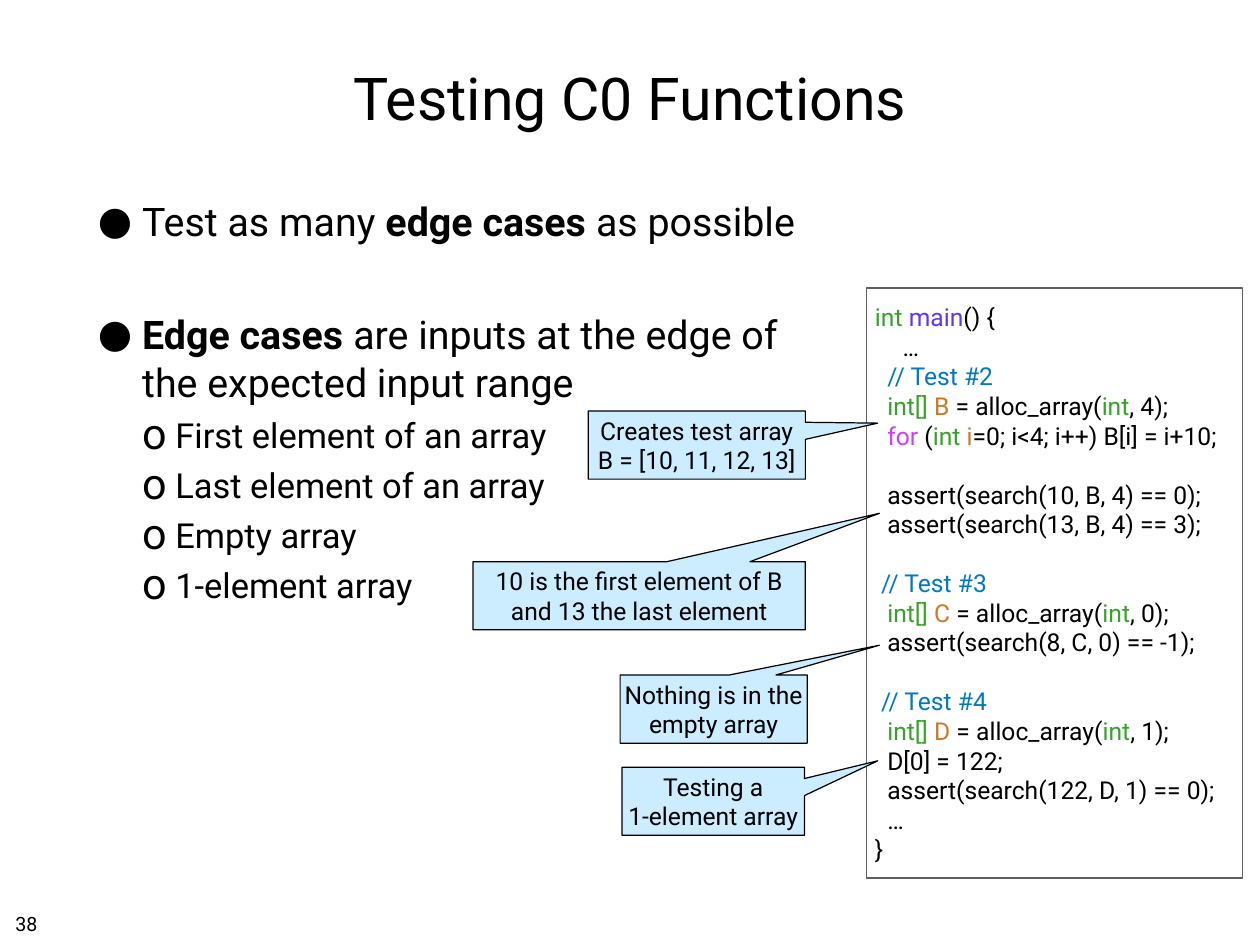
from dataclasses import dataclass
from lxml import etree
from pptx import Presentation
from pptx.dml.color import RGBColor
from pptx.enum.shapes import MSO_SHAPE
from pptx.enum.text import MSO_ANCHOR, MSO_AUTO_SIZE, PP_ALIGN
from pptx.oxml.ns import qn
from pptx.util import Pt

RECT = MSO_SHAPE.RECTANGLE
CALLOUT = MSO_SHAPE.RECTANGULAR_CALLOUT
TOP, MIDDLE = MSO_ANCHOR.TOP, MSO_ANCHOR.MIDDLE
LEFT, CENTER = PP_ALIGN.LEFT, PP_ALIGN.CENTER
FIXED = MSO_AUTO_SIZE.NONE


@dataclass(frozen=True)
class Theme:
    font: str = "Roboto"
    ink: str = "000000"
    type: str = "34A327"
    func: str = "5E34FF"
    note: str = "0079BF"
    name: str = "CD7923"
    key: str = "D03BFF"
    frame: str = "5E5E5E"
    tint: str = "CCECFF"
    title: int = 48
    body: int = 32
    sub: int = 28
    code: int = 20
    page: int = 16


THEME = Theme()
LINE = 24  # height of one line of code
STEP = 10  # one level of code indent

BULLETS = [
    [("Test as many ", False), ("edge cases ", True), ("as possible", False)],
    [("Edge cases ", True),
     ("are inputs at the edge of \vthe expected input range", False)],
]
CASES = ["First element of an array", "Last element of an array",
         "Empty array", "1-element array"]


def alloc(name, size):
    return [("int[] ", THEME.type), (name, THEME.name),
            (" = alloc_array(", THEME.ink), ("int", THEME.type),
            (f", {size});", THEME.ink)]


def plain(text):
    return [(text, THEME.ink)]


def note(text):
    return [(text, THEME.note)]


# Each line of code: indent, space before, coloured parts
CODE = [
    (0, 0, [("int ", THEME.type), ("main", THEME.func), ("() {", THEME.ink)]),
    (22.5, 0, plain("…")),
    (STEP, 0, note("// Test #2")),
    (STEP, 0, alloc("B", 4)),
    (STEP, 0, [("for ", THEME.key), ("(", THEME.ink), ("int ", THEME.type),
               ("i", THEME.name), ("=0; i<4; i++) B[i] = i+10;", THEME.ink)]),
    (STEP, LINE, plain("assert(search(10, B, 4) == 0);")),
    (STEP, 0, plain("assert(search(13, B, 4) == 3);")),
    (STEP / 2, LINE, note("// Test #3")),
    (STEP, 0, alloc("C", 0)),
    (STEP, 0, plain("assert(search(8, C, 0) == -1);")),
    (STEP / 2, LINE, note("// Test #4")),
    (STEP, 0, alloc("D", 1)),
    (STEP, 0, plain("D[0] = 122;")),
    (STEP, 0, plain("assert(search(122, D, 1) == 0);")),
    (STEP, 0, plain("…")),
    (0, 0, plain("}")),
]

# Each callout: left, top, width, tip, text
CALLOUTS = [
    (384.5, 456.5, 270, (714.7, 417.2),
     "10 is the first element of B\vand 13 the last element"),
    (478, 334, 176.5, (713.3, 343.9),
     "Creates test array\vB = [10, 11, 12, 13]"),
    (504, 548.6, 152, (714.7, 524.4), "Nothing is in the\vempty array"),
    (505.5, 623.5, 148.3, (713.4, 618.3), "Testing a\v1-element array"),
]


def style(run, size, color=THEME.ink, bold=False):
    font = run.font
    font.name, font.size, font.bold = THEME.font, Pt(size), bold
    font.color.rgb = RGBColor.from_string(color)


def write(para, text, size):
    para.text = text
    for run in para.runs:
        style(run, size)


def add_part(para, text, size, color=THEME.ink, bold=False):
    """Append text in one style; a vertical tab breaks the line."""
    for i, piece in enumerate(text.split("\v")):
        if i:
            para.add_line_break()
        run = para.add_run()
        run.text = piece
        style(run, size, color, bold)


def set_frame(frame, inset, anchor, wrap=True):
    frame.auto_size, frame.word_wrap = FIXED, wrap
    frame.vertical_anchor = anchor
    frame.margin_left = frame.margin_right = Pt(inset)
    frame.margin_top = frame.margin_bottom = Pt(inset)


def place(shape, *box):
    shape.left, shape.top, shape.width, shape.height = map(Pt, box)


def lines(frame, count):
    """Return the frame's paragraphs, extended to count."""
    while len(frame.paragraphs) < count:
        frame.add_paragraph()
    return frame.paragraphs


def set_bullet(para, char, left, hang, before, scale=100):
    para.space_before = Pt(before)
    props = para._p.get_or_add_pPr()
    props.set("marL", str(Pt(left)))
    props.set("indent", str(-Pt(hang)))
    color = etree.SubElement(props, qn("a:buClr"))
    etree.SubElement(color, qn("a:srgbClr"), val=THEME.ink)
    etree.SubElement(props, qn("a:buSzPct"), val=str(scale * 1000))
    etree.SubElement(props, qn("a:buFont"), typeface=THEME.font)
    etree.SubElement(props, qn("a:buChar"), char=char)


def add_title(slide, text):
    title = slide.shapes.title
    place(title, 75, 20, 874, 118)
    set_frame(title.text_frame, 4.5, MIDDLE)
    para = title.text_frame.paragraphs[0]
    write(para, text, THEME.title)
    para.alignment = CENTER


def add_list(slide):
    body = slide.placeholders[1]
    place(body, 75, 156, 874, 543)
    frame = body.text_frame
    set_frame(frame, 4.5, TOP)
    paras = lines(frame, len(BULLETS) + len(CASES))
    for para, parts, before in zip(paras, BULLETS, (8, 53.5)):
        set_bullet(para, "●", 36, 36, before)
        for text, bold in parts:
            add_part(para, text, THEME.body, bold=bold)
    for para, text in zip(paras[len(BULLETS):], CASES):
        para.level = 1
        set_bullet(para, "o", 63, 27, 7, 125)
        write(para, text, THEME.sub)


def add_box(slide, kind, box, edge, inset, wrap):
    shape = slide.shapes.add_shape(kind, *map(Pt, box))
    shape.shadow.inherit = False
    shape.line.width = Pt(1)
    shape.line.color.rgb = RGBColor.from_string(edge)
    set_frame(shape.text_frame, inset, MIDDLE, wrap)
    return shape


def add_code(slide):
    shape = add_box(slide, RECT, (704, 234, 306, 479.5), THEME.frame, 7.2, True)
    shape.fill.background()
    paras = lines(shape.text_frame, len(CODE))
    for para, (indent, before, parts) in zip(paras, CODE):
        para.alignment, para.space_before = LEFT, Pt(before)
        para._p.get_or_add_pPr().set("marL", str(Pt(indent)))
        for text, color in parts:
            add_part(para, text, THEME.code, color)


def add_callout(slide, left, top, width, tip, text, height=55.4):
    shape = add_box(slide, CALLOUT, (left, top, width, height),
                    THEME.ink, 3.6, False)
    shape.fill.solid()
    shape.fill.fore_color.rgb = RGBColor.from_string(THEME.tint)
    shape.adjustments[0] = (tip[0] - left) / width - 0.5
    shape.adjustments[1] = (tip[1] - top) / height - 0.5
    para = shape.text_frame.paragraphs[0]
    write(para, text, THEME.code)
    para.alignment = CENTER


def add_page(slide, text):
    box = slide.shapes.add_textbox(*map(Pt, (8, 736.5, 26.5, 25)))
    set_frame(box.text_frame, 4.5, TOP, False)
    write(box.text_frame.paragraphs[0], text, THEME.page)


def main():
    deck = Presentation()
    deck.slide_width, deck.slide_height = Pt(1024), Pt(768)
    slide = deck.slides.add_slide(deck.slide_layouts[1])
    add_title(slide, "Testing C0 Functions")
    add_list(slide)
    add_code(slide)
    for callout in CALLOUTS:
        add_callout(slide, *callout)
    add_page(slide, "38")
    deck.save("out.pptx")


if __name__ == "__main__":
    main()
